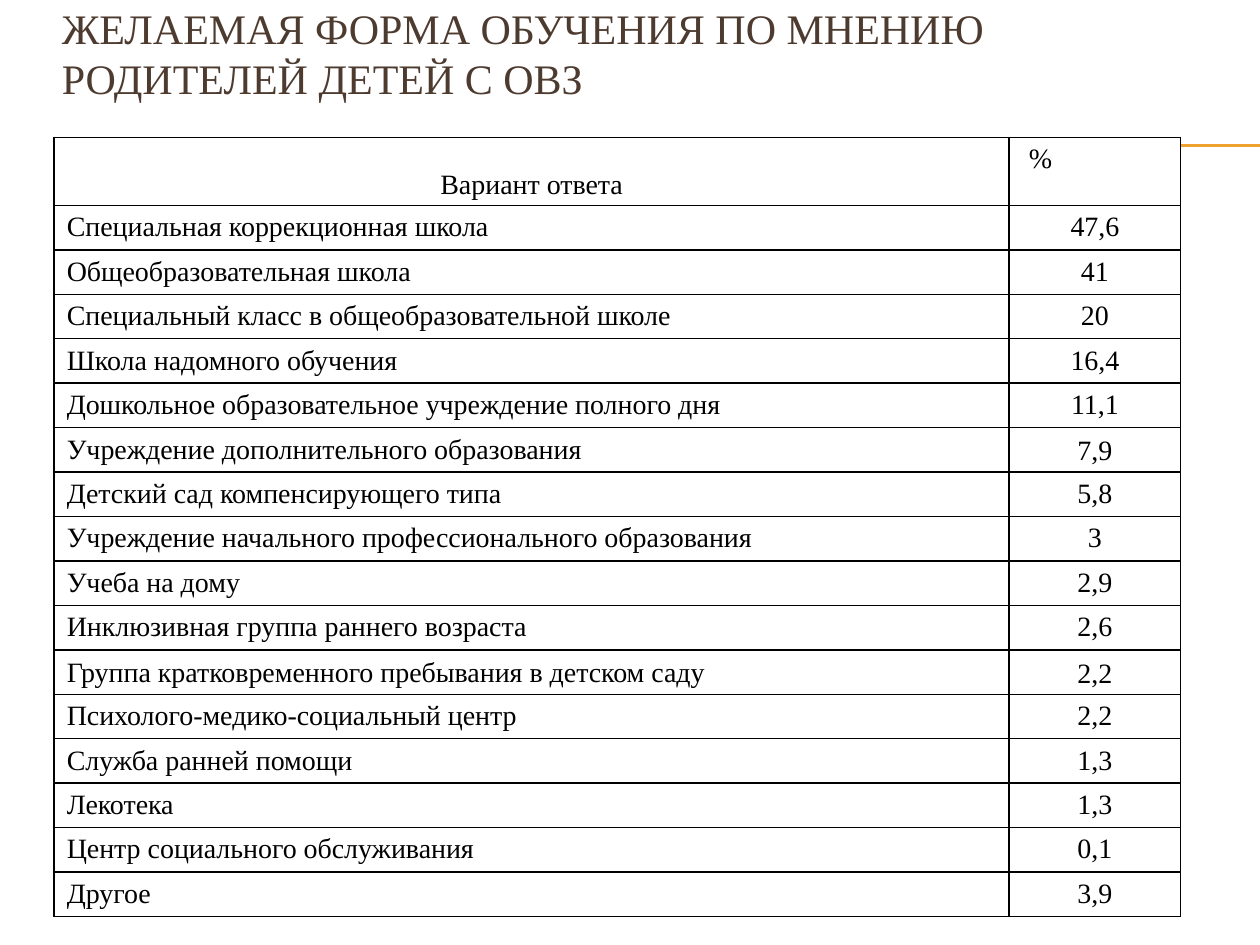
from lxml.etree import SubElement
from pptx import Presentation
from pptx.dml.color import RGBColor
from pptx.enum.shapes import MSO_CONNECTOR
from pptx.enum.text import MSO_ANCHOR as Anchor, MSO_AUTO_SIZE, PP_ALIGN as Align
from pptx.oxml.ns import qn
from pptx.util import Inches, Pt

TITLE = "ЖЕЛАЕМАЯ ФОРМА ОБУЧЕНИЯ ПО МНЕНИЮ РОДИТЕЛЕЙ ДЕТЕЙ С ОВЗ"
HEADER = ("Вариант ответа", " %")
ANSWERS = [
    ("Специальная коррекционная школа", "47,6"),
    ("Общеобразовательная школа", "41"),
    ("Специальный класс в общеобразовательной школе", "20"),
    ("Школа надомного обучения", "16,4"),
    ("Дошкольное образовательное учреждение полного дня", "11,1"),
    ("Учреждение дополнительного образования", "7,9"),
    ("Детский сад компенсирующего типа", "5,8"),
    ("Учреждение начального профессионального образования", "3"),
    ("Учеба на дому", "2,9"),
    ("Инклюзивная группа раннего возраста", "2,6"),
    ("Группа кратковременного пребывания в детском саду", "2,2"),
    ("Психолого-медико-социальный центр", "2,2"),
    ("Служба ранней помощи", "1,3"),
    ("Лекотека", "1,3"),
    ("Центр социального обслуживания", "0,1"),
    ("Другое", "3,9"),
]
LOW_SET_ANSWERS = {"Учреждение дополнительного образования",
                   "Группа кратковременного пребывания в детском саду"}

COLORS = {"title": "4E3B30", "rule": "F0A22E", "text": "000000",
          "border": "000000", "cell": "FFFFFF"}
FONT = "Times New Roman"
COLUMN_WIDTHS = (7.58, 1.36)
TABLE_LEFT, TABLE_TOP, TABLE_HEIGHT, HEADER_HEIGHT = 0.43, 1.09, 6.19, 0.54
HANGING_INDENT = 0.38


def add_run(paragraph, text, size, color):
    run = paragraph.add_run()
    run.text = text
    run.font.name = FONT
    run.font.size = Pt(size)
    run.font.color.rgb = RGBColor.from_string(COLORS[color])


def add_title(slide):
    title = slide.shapes.title
    title.left, title.top = Inches(0.39), Inches(0)
    title.width, title.height = Inches(9.11), Inches(0.84)
    frame = title.text_frame
    frame.word_wrap = True
    frame.auto_size = MSO_AUTO_SIZE.NONE
    frame.vertical_anchor = Anchor.MIDDLE
    paragraph = frame.paragraphs[0]
    paragraph.alignment = Align.LEFT
    add_run(paragraph, TITLE, 24, "title")


def add_rule(slide, y):
    rule = slide.shapes.add_connector(
        MSO_CONNECTOR.STRAIGHT, Inches(0.56), Inches(y), Inches(10), Inches(y))
    rule.line.color.rgb = RGBColor.from_string(COLORS["rule"])
    rule.line.width = Pt(0.75)
    SubElement(rule._element.spPr, qn("a:effectLst"))


def add_borders(cell):
    properties = cell._tc.get_or_add_tcPr()
    for position, side in enumerate(("lnL", "lnR", "lnT", "lnB")):
        border = properties.makeelement(qn(f"a:{side}"), {"w": str(Pt(1))})
        fill = SubElement(border, qn("a:solidFill"))
        SubElement(fill, qn("a:srgbClr"), val=COLORS["border"])
        properties.insert(position, border)


def fill_cell(cell, text, alignment, anchor):
    cell.fill.solid()
    cell.fill.fore_color.rgb = RGBColor.from_string(COLORS["cell"])
    cell.margin_top, cell.margin_bottom = Inches(0.05), Inches(0.04)
    cell.vertical_anchor = anchor
    paragraph = cell.text_frame.paragraphs[0]
    paragraph.alignment = alignment
    indents = paragraph._p.get_or_add_pPr()
    indents.set("marL", str(Inches(HANGING_INDENT)))
    indents.set("indent", str(-Inches(HANGING_INDENT)))
    add_run(paragraph, text, 16, "text")
    add_borders(cell)


def add_answer_table(slide):
    table = slide.shapes.add_table(
        len(ANSWERS) + 1, len(COLUMN_WIDTHS), Inches(TABLE_LEFT), Inches(TABLE_TOP),
        Inches(sum(COLUMN_WIDTHS)), Inches(TABLE_HEIGHT)).table
    table.horz_banding = False
    for column, width in zip(table.columns, COLUMN_WIDTHS):
        column.width = Inches(width)
    answer_height = (TABLE_HEIGHT - HEADER_HEIGHT) / len(ANSWERS)
    for index, row in enumerate(table.rows):
        row.height = Inches(answer_height if index else HEADER_HEIGHT)

    fill_cell(table.cell(0, 0), HEADER[0], Align.CENTER, Anchor.BOTTOM)
    fill_cell(table.cell(0, 1), HEADER[1], Align.LEFT, Anchor.TOP)
    for index, (answer, percent) in enumerate(ANSWERS, start=1):
        low = answer in LOW_SET_ANSWERS
        fill_cell(table.cell(index, 0), answer, Align.JUSTIFY,
                  Anchor.MIDDLE if low else Anchor.TOP)
        fill_cell(table.cell(index, 1), percent, Align.CENTER,
                  Anchor.BOTTOM if low else Anchor.TOP)


def main():
    presentation = Presentation()
    presentation.slide_width, presentation.slide_height = Inches(10), Inches(7.5)
    slide = presentation.slides.add_slide(presentation.slide_layouts[5])
    for y in (1.15, 1.16):
        add_rule(slide, y)
    add_title(slide)
    add_answer_table(slide)
    presentation.save("out.pptx")


if __name__ == "__main__":
    main()
